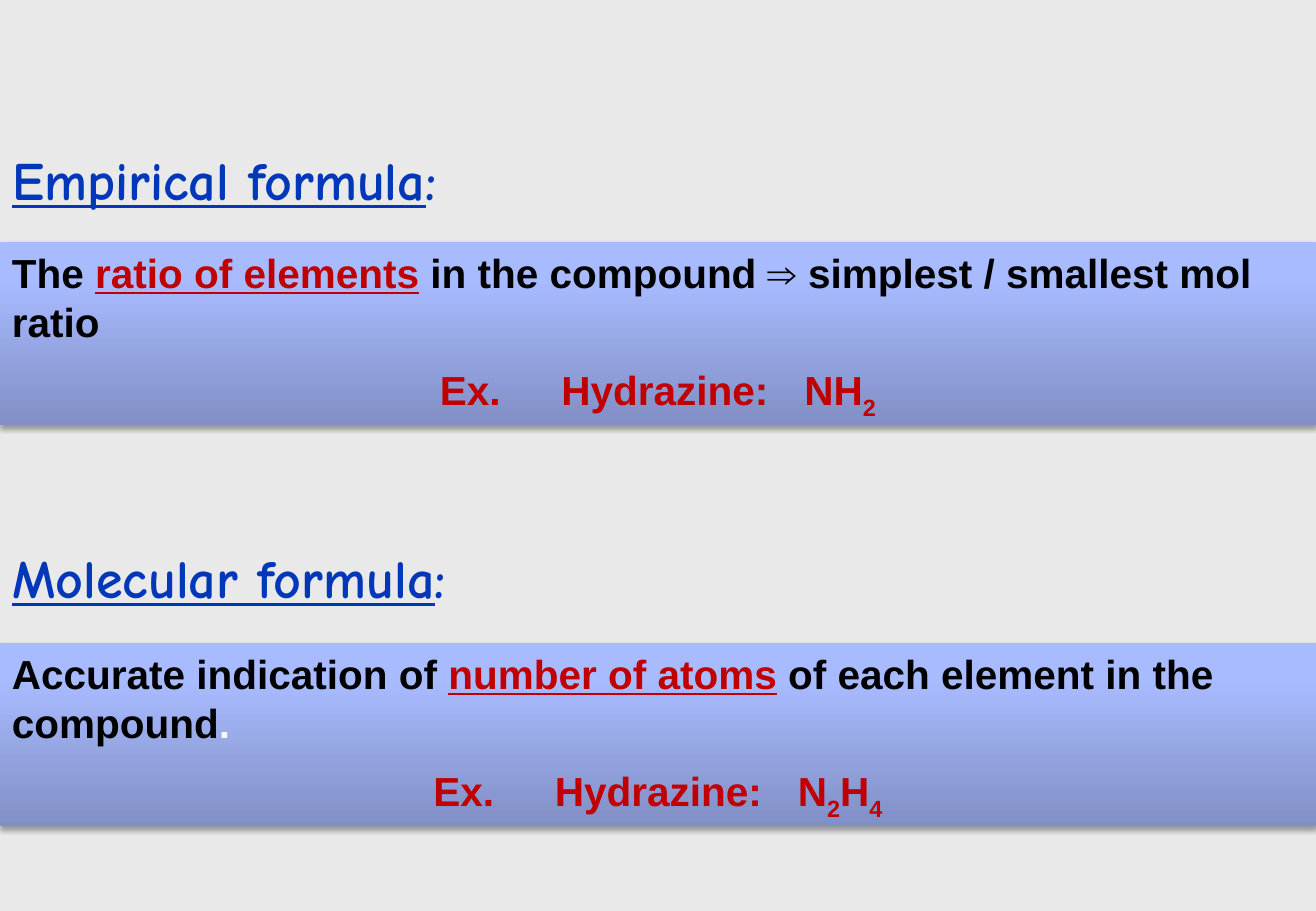
import copy
import dataclasses

import lxml.etree
import pptx
import pptx.dml.color
import pptx.enum.text
import pptx.oxml.ns
import pptx.util

EMU_PER_PX = 7526
WIDTH, HEIGHT = 1316, 911
BAND_HEIGHT, HEADING_HEIGHT = 183, 77
COLORS = {
    "background": "E9E9E9",
    "heading": "0237BA",
    "text": "000000",
    "accent": "C00000",
    "period": "F8F8F8",
    "shadow": "000000",
}
BAND_STOPS = [(0, "818FC5"), (0.8, "A8BBFF"), (1, "AABCFF")]
ALIGN = pptx.enum.text.PP_ALIGN
qn = pptx.oxml.ns.qn


@dataclasses.dataclass
class Part:
    text: str
    color: str = "accent"
    underline: bool = False
    subscript: bool = False


@dataclasses.dataclass
class Section:
    placeholder: int
    heading: str
    heading_top: int
    heading_width: int
    band_top: int
    definition: list[Part]
    example: list[Part]


SECTIONS = [
    Section(1, "Empirical formula", 140, 844, 242,
            [Part("The ", "text"), Part("ratio of elements", underline=True),
             Part(" "), Part("in the compound ⇒ simplest / smallest mol ratio", "text")],
            [Part("Ex.\tHydrazine:\tNH"), Part("2", subscript=True)]),
    Section(3, "Molecular formula", 538, 949, 643,
            [Part("Accurate indication of ", "text"),
             Part("number of atoms", underline=True), Part(" "),
             Part("of each element in the compound", "text"), Part(".", "period")],
            [Part("Ex.\tHydrazine:\tN"), Part("2", subscript=True),
             Part("H"), Part("4", subscript=True)]),
]


def px(n: int) -> int:
    return pptx.util.Emu(n * EMU_PER_PX)


def rgb(value: str) -> pptx.dml.color.RGBColor:
    return pptx.dml.color.RGBColor.from_string(value)


def add_text(p, text: str, *, size: int, font: str, color: str,
             underline: bool = False, subscript: bool = False) -> None:
    r = p.add_run()
    r.text = text
    r.font.size = pptx.util.Pt(size)
    r.font.name = font
    r.font.bold = True
    r.font.underline = underline
    r.font.color.rgb = rgb(COLORS[color])
    if subscript:
        r.font._element.set("baseline", "-25000")


def set_frame(tf) -> None:
    tf.word_wrap = True
    tf.vertical_anchor = pptx.enum.text.MSO_ANCHOR.TOP
    tf.auto_size = pptx.enum.text.MSO_AUTO_SIZE.SHAPE_TO_FIT_TEXT


def style_band(sp) -> None:
    # Three-stop gradient, dark at the bottom
    sp.fill.gradient()
    sp.fill.gradient_angle = 90
    stops = sp._element.spPr.find(".//" + qn("a:gsLst"))
    stops.append(copy.deepcopy(stops[-1]))
    for stop, (position, color) in zip(sp.fill.gradient_stops, BAND_STOPS):
        stop.position = position
        stop.color.rgb = rgb(color)
    sp.line.fill.background()

    # Soft shadow below
    sp.shadow.inherit = False
    effects = sp._element.spPr.find(qn("a:effectLst"))
    shadow = lxml.etree.SubElement(
        effects, qn("a:outerShdw"), blurRad=str(pptx.util.Pt(3.1)),
        dist=str(pptx.util.Pt(1.8)), dir="5400000", rotWithShape="0")
    color = lxml.etree.SubElement(shadow, qn("a:srgbClr"), val=COLORS["shadow"])
    lxml.etree.SubElement(color, qn("a:alpha"), val="35000")


def add_band(s, section: Section) -> None:
    sp = s.shapes.add_shape(pptx.enum.shapes.MSO_SHAPE.RECTANGLE, 0,
                            px(section.band_top), px(WIDTH), px(BAND_HEIGHT))
    style_band(sp)
    tf = sp.text_frame
    set_frame(tf)
    definition, example = tf.paragraphs[0], tf.add_paragraph()
    definition.alignment = ALIGN.LEFT
    example.alignment = ALIGN.CENTER
    example.space_before = pptx.util.Pt(12)
    for p, parts in ((definition, section.definition), (example, section.example)):
        for part in parts:
            add_text(p, part.text, size=24, font="Arial", color=part.color,
                     underline=part.underline, subscript=part.subscript)


def add_heading(s, section: Section) -> None:
    sp = next(ph for ph in s.placeholders
              if ph.placeholder_format.idx == section.placeholder)
    sp.left, sp.top = 0, px(section.heading_top)
    sp.width, sp.height = px(section.heading_width), px(HEADING_HEIGHT)
    set_frame(sp.text_frame)
    p = sp.text_frame.paragraphs[0]
    p.space_before = pptx.util.Pt(0)
    for text, underline in ((section.heading, True), (":", False)):
        add_text(p, text, size=32, font="Comic Neue", color="heading",
                 underline=underline)


def main() -> None:
    prs = pptx.Presentation()
    prs.slide_width, prs.slide_height = px(WIDTH), px(HEIGHT)
    s = prs.slides.add_slide(prs.slide_layouts.get_by_name("Comparison"))
    s.background.fill.solid()
    s.background.fill.fore_color.rgb = rgb(COLORS["background"])

    # Headings and their definitions
    for section in SECTIONS:
        add_band(s, section)
        add_heading(s, section)

    # Unused placeholders
    for ph in list(s.placeholders):
        if not ph.text_frame.text:
            ph._element.getparent().remove(ph._element)
    prs.save("out.pptx")


if __name__ == "__main__":
    main()
